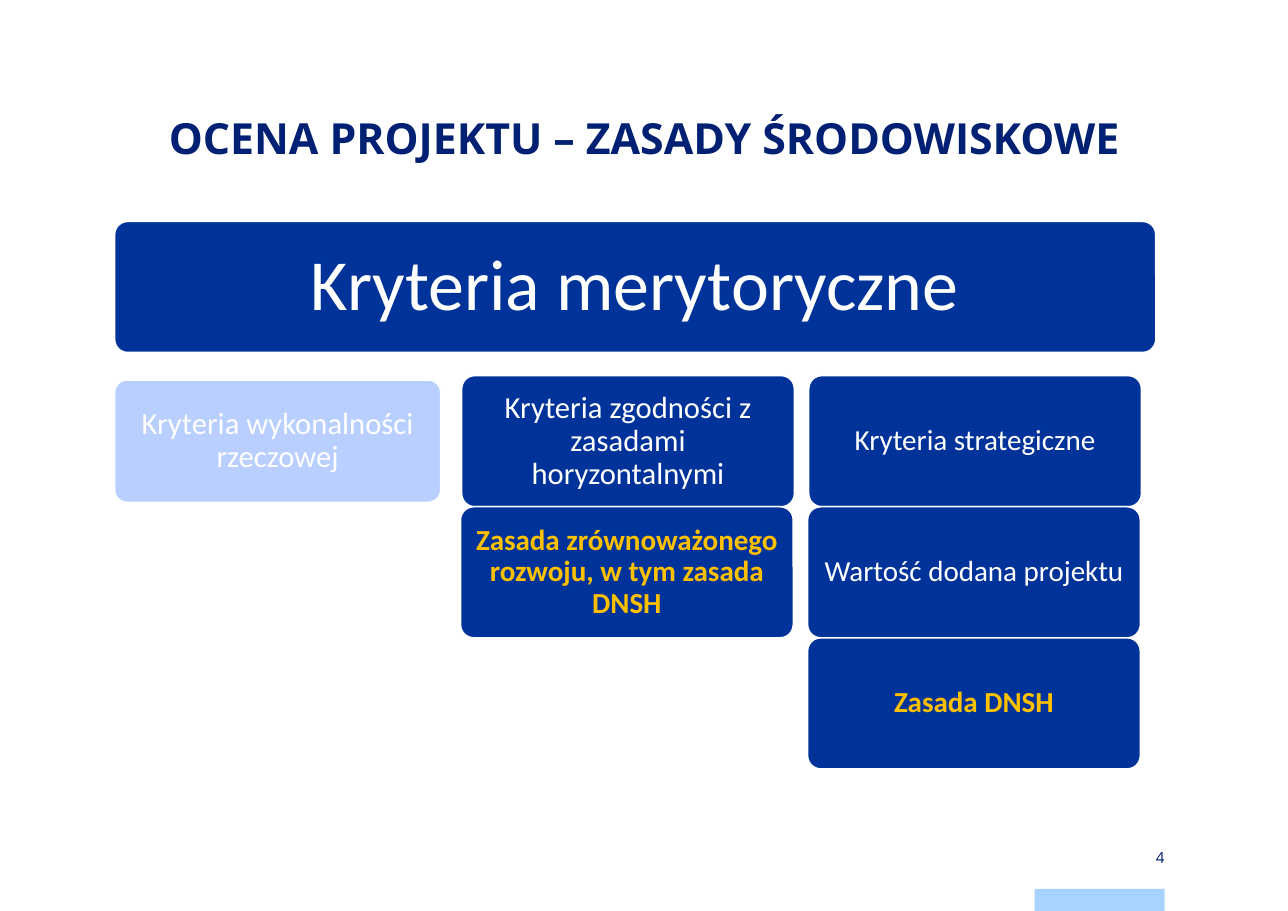
from pptx import Presentation
from pptx.dml.color import RGBColor
from pptx.enum.shapes import MSO_SHAPE
from pptx.enum.text import MSO_ANCHOR, PP_ALIGN
from pptx.util import Inches, Pt

COLOURS = {
    "navy": "002073",
    "blue": "003399",
    "pale": "B8CFFF",
    "sky": "A6D3FF",
    "gold": "FFC000",
    "white": "FFFFFF",
}
TITLE = "OCENA PROJEKTU – ZASADY ŚRODOWISKOWE"
HEADING = "Kryteria merytoryczne"
PAGE_NUMBER = "4"
CRITERIA = [
    [("Kryteria wykonalności rzeczowej", 20, "pale", "white")],
    [
        ("Kryteria zgodności z zasadami horyzontalnymi", 20, "blue", "white"),
        ("Zasada zrównoważonego rozwoju, w tym zasada DNSH", 19, "blue", "gold"),
    ],
    [
        ("Kryteria strategiczne", 19, "blue", "white"),
        ("Wartość dodana projektu", 19, "blue", "white"),
        ("Zasada DNSH", 19, "blue", "gold"),
    ],
]

LEFT, TOP = 1.04, 3.41
COLUMN_PITCH = 3.15
CARD_WIDTH, CARD_HEIGHT = 3.02, 1.19
PALE_INSET = 0.04
LOWER_SHIFT = 0.01


def colour(name):
    return RGBColor.from_string(COLOURS[name])


def write(frame, wording, font, size, ink, align, insets, bold=False):
    frame.word_wrap = True
    frame.margin_left = frame.margin_right = Inches(insets[0])
    frame.margin_top = frame.margin_bottom = Inches(insets[1])
    frame.text = wording
    paragraph = frame.paragraphs[0]
    paragraph.alignment = align
    run_font = paragraph.runs[0].font
    run_font.name = font
    run_font.size = Pt(size)
    run_font.bold = bold
    run_font.color.rgb = colour(ink)
    return paragraph


def add_panel(slide, preset, box, fill):
    panel = slide.shapes.add_shape(preset, *map(Inches, box))
    panel.shadow.inherit = False
    panel.fill.solid()
    panel.fill.fore_color.rgb = colour(fill)
    panel.line.fill.background()
    return panel


def add_card(slide, box, wording, size, fill, ink, inset=0.08):
    card = add_panel(slide, MSO_SHAPE.ROUNDED_RECTANGLE, box, fill)
    card.adjustments[0] = 0.1
    card.line.color.rgb = colour("white")
    card.line.width = Pt(1)
    card.text_frame.vertical_anchor = MSO_ANCHOR.MIDDLE
    paragraph = write(card.text_frame, wording, "Calibri", size, ink,
                      PP_ALIGN.CENTER, (inset, inset), ink == "gold")
    paragraph.line_spacing = 0.9


def main():
    presentation = Presentation()
    presentation.slide_width = Inches(11.69)
    presentation.slide_height = Inches(8.27)
    slide = presentation.slides.add_slide(presentation.slide_layouts[6])

    add_panel(slide, MSO_SHAPE.RECTANGLE, (9.39, 8.07, 1.18, 0.2), "sky")

    title = slide.shapes.add_textbox(*map(Inches, (1.12, 0.98, 9.45, 1.18)))
    title_line = write(title.text_frame, TITLE, "Open Sans", 28, "navy",
                       PP_ALIGN.CENTER, (0, 0), True)
    title_line.line_spacing = Pt(36)

    add_card(slide, (LEFT, 2.01, 9.45, CARD_HEIGHT), HEADING, 47, "blue", "white", 0.2)

    for column, cards in enumerate(CRITERIA):
        for row, (wording, size, fill, ink) in enumerate(cards):
            left = LEFT + column * COLUMN_PITCH - (LOWER_SHIFT if row else 0)
            top = TOP + row * CARD_HEIGHT
            width, height = CARD_WIDTH, CARD_HEIGHT
            if fill == "pale":
                top += PALE_INSET
                width -= 1.5 * PALE_INSET
                height -= 2 * PALE_INSET
            add_card(slide, (left, top, width, height), wording, size, fill, ink)

    page = slide.shapes.add_textbox(*map(Inches, (9.39, 7.68, 1.18, 0.2)))
    page.text_frame.vertical_anchor = MSO_ANCHOR.MIDDLE
    write(page.text_frame, PAGE_NUMBER, "Open Sans", 10, "navy",
          PP_ALIGN.RIGHT, (0, 0.08))

    presentation.save("out.pptx")


if __name__ == "__main__":
    main()
